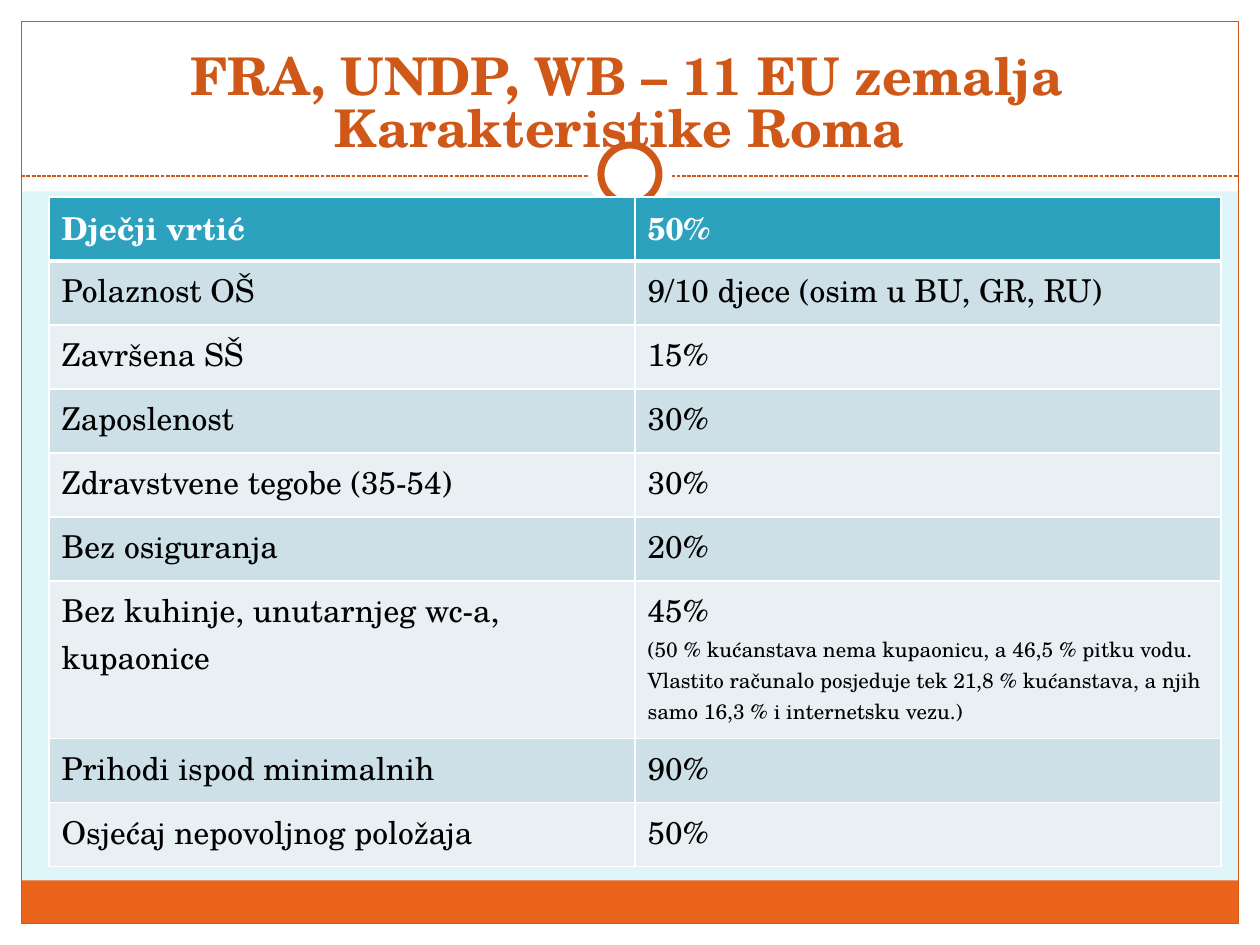
from dataclasses import dataclass

from lxml import etree
from pptx import Presentation
from pptx.dml.color import RGBColor
from pptx.enum.dml import MSO_LINE
from pptx.enum.shapes import MSO_CONNECTOR, MSO_SHAPE
from pptx.enum.text import MSO_ANCHOR, PP_ALIGN
from pptx.oxml.ns import qn
from pptx.util import Cm, Pt

RECT, OVAL = MSO_SHAPE.RECTANGLE, MSO_SHAPE.OVAL
STRAIGHT, DASH = MSO_CONNECTOR.STRAIGHT, MSO_LINE.SQUARE_DOT
BOTTOM, TOP = MSO_ANCHOR.BOTTOM, MSO_ANCHOR.TOP
LEFT, CENTER = PP_ALIGN.LEFT, PP_ALIGN.CENTER

FONT = "TeX Gyre Schola"
WHITE, BLACK, RUST, ORANGE = "FFFFFF", "000000", "CF5818", "EB641B"
PALE, TEAL, BANDS = "DEF5FA", "2DA2BF", ("E8F0F4", "CDE0E8")
WIDE, HIGH, EDGE = 25.4, 19.05, 0.43
ROW, TALL = 1.29, 3.18


@dataclass
class Box:
    """Lengths in centimetres."""
    left: float
    top: float
    width: float
    height: float

    def place(self) -> tuple:
        return Cm(self.left), Cm(self.top), Cm(self.width), Cm(self.height)


@dataclass
class Fact:
    label: str
    value: str
    note: str = ""


FACTS = [
    Fact("Dječji vrtić", "50%"),
    Fact("Polaznost OŠ", "9/10 djece (osim u BU, GR, RU)"),
    Fact("Završena SŠ", "15%"),
    Fact("Zaposlenost", "30%"),
    Fact("Zdravstvene tegobe (35-54)", "30%"),
    Fact("Bez osiguranja", "20%"),
    Fact("Bez kuhinje, unutarnjeg wc-a, kupaonice", "45%",
         "(50 % kućanstava nema kupaonicu, a 46,5 % pitku vodu. Vlastito "
         "računalo posjeduje tek 21,8 % kućanstava, a njih samo 16,3 % "
         "i internetsku vezu.)"),
    Fact("Prihodi ispod minimalnih", "90%"),
    Fact("Osjećaj nepovoljnog položaja", "50%"),
]


def paint(target, code: str) -> None:
    """Give a fill or a line one solid colour."""
    target.solid()
    target.fore_color.rgb = RGBColor.from_string(code)


def draw(slide, kind, box: Box, fill: str = "", line: str = "",
         width: float = 0.75) -> None:
    shape = slide.shapes.add_shape(kind, *box.place())
    shape.shadow.inherit = False
    if fill:
        paint(shape.fill, fill)
    else:
        shape.fill.background()
    if line:
        paint(shape.line.fill, line)
        shape.line.width = Pt(width)
    else:
        shape.line.fill.background()


def write(para, text: str, size: float = 18, color: str = BLACK,
          bold: bool = False, align=LEFT, pitch: float = 1) -> None:
    para.text = text
    para.alignment = align
    para.line_spacing = pitch
    for run in para.runs:
        font = run.font
        font.name, font.size, font.bold = FONT, Pt(size), bold
        font.color.rgb = RGBColor.from_string(color)


def border(cell, low: float) -> None:
    """Draw white edges, the lower one with its own width."""
    props = cell._tc.get_or_add_tcPr()
    sides = (("lnL", 1), ("lnR", 1), ("lnT", 1), ("lnB", low))
    for spot, (side, width) in enumerate(sides):
        edge = etree.Element(qn(f"a:{side}"), w=str(Pt(width)))
        fill = etree.SubElement(edge, qn("a:solidFill"))
        etree.SubElement(fill, qn("a:srgbClr"), val=WHITE)
        props.insert(spot, edge)


def frame(slide) -> None:
    """Draw the white margins, the orange foot, the rule and the ring."""
    inner = WIDE - 2 * EDGE
    for box in (Box(0, HIGH - EDGE, WIDE, EDGE), Box(0, 0, WIDE, 3.86),
                Box(0, 0, EDGE, HIGH), Box(WIDE - EDGE, 0, EDGE, HIGH)):
        draw(slide, RECT, box, fill=WHITE)
    draw(slide, RECT, Box(EDGE, 17.75, inner, 0.87), fill=ORANGE)
    draw(slide, RECT, Box(EDGE, EDGE, inner, HIGH - 2 * EDGE), line=RUST)

    rule = slide.shapes.add_connector(
        STRAIGHT, Cm(EDGE), Cm(3.55), Cm(WIDE - EDGE), Cm(3.55))
    paint(rule.line.fill, RUST)
    rule.line.width, rule.line.dash_style = Pt(0.75), DASH
    etree.SubElement(rule._element.spPr, qn("a:effectLst"))

    for size, line in ((1.7, ""), (1.17, RUST)):
        ring = Box((WIDE - size) / 2, 3.51 - size / 2, size, size)
        draw(slide, OVAL, ring, fill=WHITE, line=line, width=4)


def head(slide) -> None:
    box = slide.shapes.add_textbox(*Box(0.79, 1.19, 23.7, 2.11).place())
    text = box.text_frame
    text.word_wrap, text.vertical_anchor = True, BOTTOM
    write(text.paragraphs[0],
          "FRA, UNDP, WB – 11 EU zemalja\vKarakteristike Roma ",
          size=29.7, color=RUST, bold=True, align=CENTER, pitch=0.82)


def grid(slide) -> None:
    """Fill the table of facts, with the first as its header."""
    area = Box(0.99, 3.97, 23.62, ROW * (len(FACTS) - 1) + TALL)
    table = slide.shapes.add_table(len(FACTS), 2, *area.place()).table
    for row, fact in enumerate(FACTS):
        top = row == 0
        table.rows[row].height = Cm(TALL if fact.note else ROW)
        for col, text in enumerate((fact.label, fact.value)):
            cell = table.cell(row, col)
            cell.vertical_anchor = TOP
            paint(cell.fill, TEAL if top else BANDS[row % 2])
            border(cell, 3 if top else 1)
            write(cell.text_frame.paragraphs[0], text,
                  color=WHITE if top else BLACK, bold=top)
        if fact.note:
            write(table.cell(row, 1).text_frame.add_paragraph(),
                  fact.note, size=12)


def main() -> None:
    deck = Presentation()
    deck.slide_width, deck.slide_height = Cm(WIDE), Cm(HIGH)
    slide = deck.slides.add_slide(deck.slide_layouts[6])
    paint(slide.background.fill, PALE)
    frame(slide)
    head(slide)
    grid(slide)
    deck.save("out.pptx")


if __name__ == "__main__":
    main()
